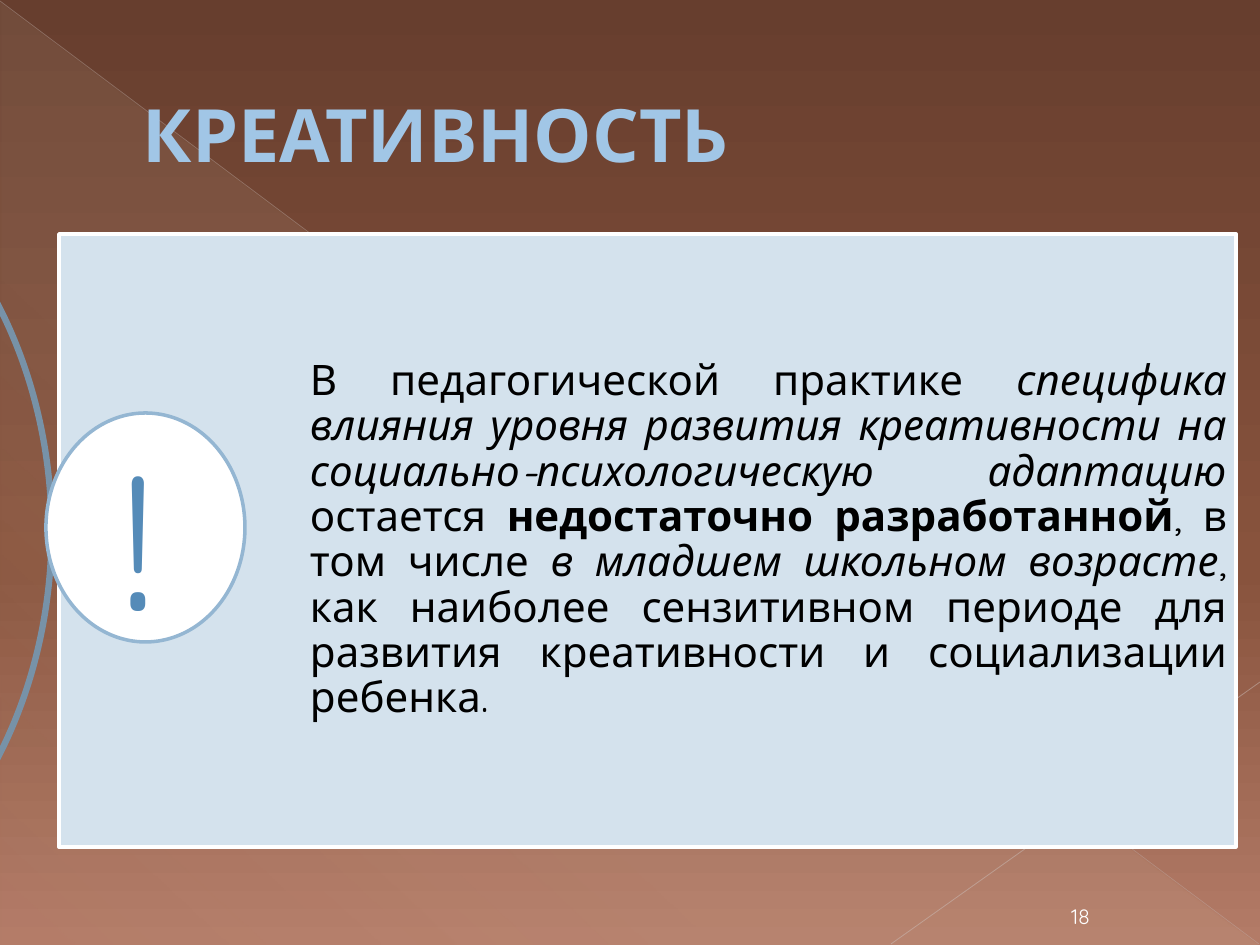
"""Build the slide about creativity."""
from dataclasses import dataclass
from typing import NamedTuple

from lxml.etree import SubElement
from pptx import Presentation
from pptx.dml.color import RGBColor as Rgb
from pptx.enum.shapes import MSO_CONNECTOR as Conn, MSO_SHAPE as Kind
from pptx.enum.text import MSO_ANCHOR as Anchor, PP_ALIGN as Align
from pptx.oxml.ns import qn
from pptx.util import Pt


@dataclass(frozen=True)
class Theme:
    """Colours, font and type sizes."""
    font: str = "Quicksand"
    title: str = "A1C6E6"
    edge: str = "677E91"
    arc: str = "7792A8"
    panel: str = "D4E2ED"
    ring: str = "94B6D2"
    mark: str = "558BB8"
    sand: str = "EBDDC3"
    white: str = "FFFFFF"
    black: str = "000000"
    big: int = 42
    body: int = 24
    small: int = 12
    huge: int = 110


class Box(NamedTuple):
    """Left, top, width and height in px."""
    x: int
    y: int
    w: int
    h: int


class Stop(NamedTuple):
    """Gradient stop: place, colour and opacity in percent."""
    pos: int
    tint: str
    alpha: int = 100


class Run(NamedTuple):
    """Piece of text with its style."""
    text: str
    bold: bool = False
    slant: bool = False


class Ray(NamedTuple):
    """Thin decorative line."""
    x1: int
    y1: int
    x2: int
    y2: int
    tint: str
    width: float
    alpha: int


class Form(NamedTuple):
    """Preset shape with fill and outline."""
    kind: Kind
    box: Box
    fill: str | None
    line: str | None
    adj: tuple = ()


T = Theme()
PX = 914400 / 126
PANEL = Box(59, 234, 1177, 613)
BACK = [Stop(0, "673E2E"), Stop(60, "88533D"), Stop(100, "B37B67")]
GLOW = [Stop(0, T.sand, 10), Stop(70, T.sand, 8), Stop(100, T.sand, 1)]
RAYS = [Ray(0, 1, 1259, 944, "C8BCB8", 0.39, 35),
        Ray(1260, 682, 891, 944, "CEC3BF", 0.47, 45)]
FORMS = [Form(Kind.BLOCK_ARC, Box(-646, 105, 699, 852), None, T.arc, (189, 27, 0.004)),
         Form(Kind.RECTANGLE, PANEL, T.panel, T.white),
         Form(Kind.OVAL, Box(46, 413, 199, 229), T.white, T.ring)]
BODY = [
    Run("В педагогической практике "),
    Run("специфика влияния уровня развития креативности на "
        "социально-психологическую адаптацию", slant=True),
    Run(" остается "),
    Run("недостаточно разработанной", bold=True),
    Run(", в том числе "),
    Run("в младшем школьном возрасте", slant=True),
    Run(", как наиболее сензитивном периоде для развития креативности "
        "и социализации ребенка."),
]


def emu(*nums: int) -> list[int]:
    """Turn px into EMU."""
    return [round(n * PX) for n in nums]


def tone(root, tint: str, alpha: int = 100) -> None:
    """Add a colour with opacity to an XML element."""
    node = SubElement(root, qn("a:srgbClr"), val=tint)
    if alpha < 100:
        SubElement(node, qn("a:alpha"), val=str(alpha * 1000))


def grade(fill, root, stops: list[Stop], angle: int) -> None:
    """Give a fill its gradient, with a clockwise angle."""
    fill.gradient()
    fill.gradient_angle = 360 - angle
    group = root.xpath(".//a:gsLst")[0]
    for old in list(group):
        group.remove(old)
    for stop in stops:
        node = SubElement(group, qn("a:gs"), pos=str(stop.pos * 1000))
        tone(node, stop.tint, stop.alpha)


def draw(slide, form: Form):
    """Draw a preset shape."""
    shape = slide.shapes.add_shape(form.kind, *emu(*form.box))
    shape.shadow.inherit = False
    for i, val in enumerate(form.adj):
        shape.adjustments[i] = val
    if form.fill:
        shape.fill.solid()
        shape.fill.fore_color.rgb = Rgb.from_string(form.fill)
    else:
        shape.fill.background()
    if form.line:
        shape.line.color.rgb = Rgb.from_string(form.line)
        shape.line.width = Pt(2)
    else:
        shape.line.fill.background()
    return shape


def trace(slide, ray: Ray) -> None:
    """Draw a translucent line."""
    line = slide.shapes.add_connector(Conn.STRAIGHT, *emu(*ray[:4]))
    line.line.width = Pt(ray.width)
    line.line.fill.solid()
    line.line.color.rgb = Rgb.from_string(ray.tint)
    tint = line._element.spPr.xpath("./a:ln//a:srgbClr")[0]
    SubElement(tint, qn("a:alpha"), val=str(ray.alpha * 1000))
    SubElement(line._element.spPr, qn("a:effectLst"))


def write(slide, box: Box, runs: list[Run], *, size: int, tint: str,
          align: Align = Align.LEFT, anchor: Anchor = Anchor.TOP,
          pad: tuple = (13, 6, 13, 6), space: float = 1.0,
          edge: str | None = None, wrap: bool = True) -> None:
    """Place formatted text in a box."""
    frame = slide.shapes.add_textbox(*emu(*box)).text_frame
    frame.word_wrap = wrap
    frame.vertical_anchor = anchor
    (frame.margin_left, frame.margin_top,
     frame.margin_right, frame.margin_bottom) = emu(*pad)
    para = frame.paragraphs[0]
    para.alignment = align
    para.line_spacing = space
    for part in runs:
        run = para.add_run()
        run.text = part.text
        font = run.font
        font.name, font.size = T.font, Pt(size)
        font.bold, font.italic = part.bold, part.slant
        font.color.rgb = Rgb.from_string(tint)
        if edge:
            line = SubElement(run._r.rPr, qn("a:ln"), w=str(Pt(0.5)))
            tone(SubElement(line, qn("a:solidFill")), edge)
            run._r.rPr.insert(0, line)


def main() -> None:
    """Compose and save the slide."""
    deck = Presentation()
    deck.slide_width, deck.slide_height = emu(1260, 945)
    slide = deck.slides.add_slide(deck.slide_layouts[6])
    grade(slide.background.fill, slide._element, BACK, 90)
    glow = draw(slide, Form(Kind.RIGHT_TRIANGLE, Box(1, 2, 1258, 943), None, None))
    grade(glow.fill, glow._element, GLOW, 133)
    for ray in RAYS:
        trace(slide, ray)
    write(slide, Box(63, 37, 1134, 193), [Run("КРЕАТИВНОСТЬ", bold=True)],
          size=T.big, tint=T.title, edge=T.edge, anchor=Anchor.MIDDLE,
          pad=(80, 6, 13, 6))
    for form in FORMS:
        draw(slide, form)
    write(slide, PANEL, BODY, size=T.body, tint=T.black, align=Align.JUSTIFY,
          anchor=Anchor.MIDDLE, pad=(251, 9, 9, 9), space=0.9)
    write(slide, Box(1046, 893, 69, 42), [Run("18")], size=T.small,
          tint=T.white, align=Align.CENTER, anchor=Anchor.BOTTOM)
    write(slide, Box(108, 413, 49, 246), [Run("!")], size=T.huge,
          tint=T.mark, wrap=False)
    deck.save("out.pptx")


if __name__ == "__main__":
    main()
